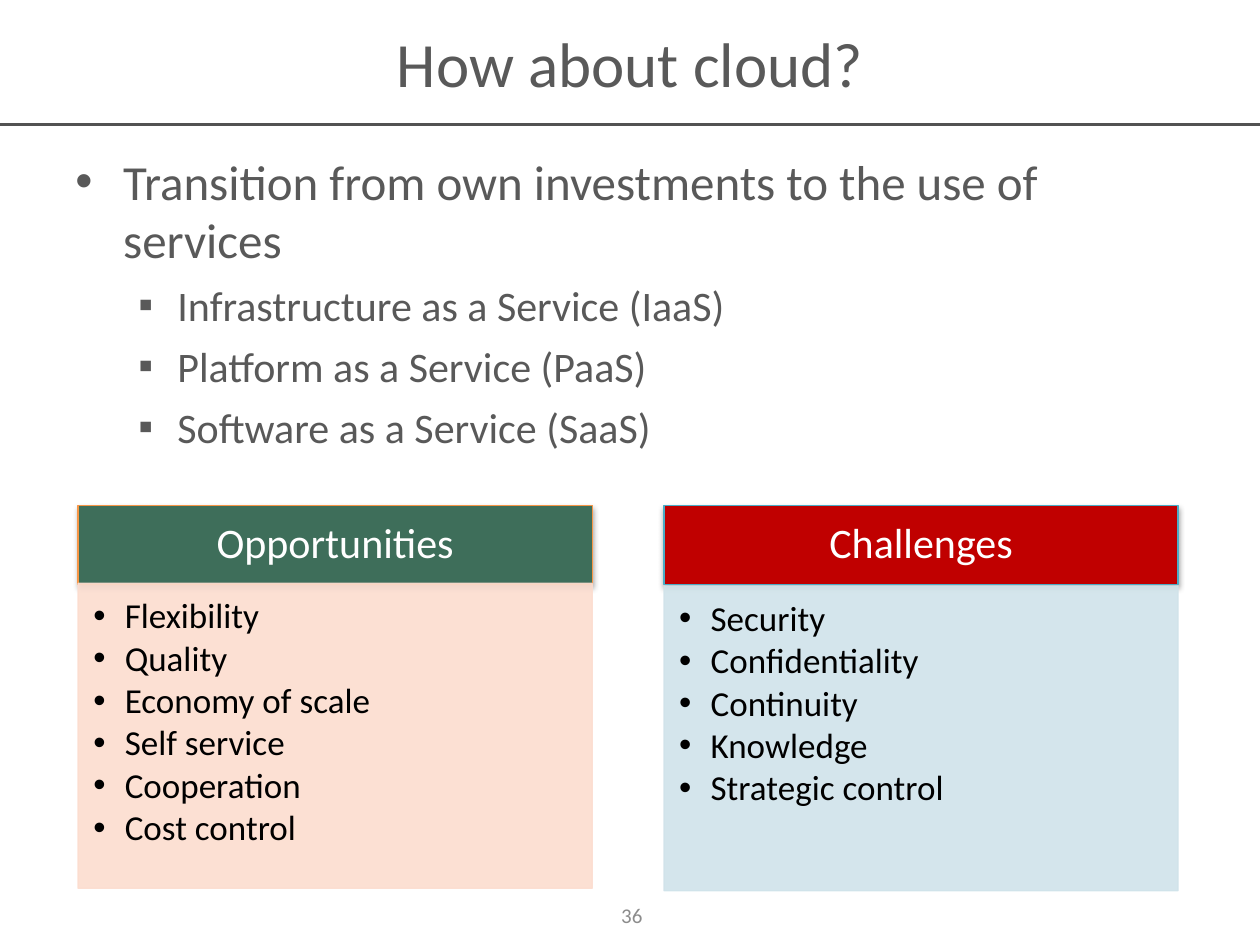
from lxml.etree import SubElement
from pptx import Presentation
from pptx.dml.color import RGBColor
from pptx.enum.shapes import MSO_CONNECTOR as Connector, MSO_SHAPE as Shape
from pptx.enum.text import MSO_ANCHOR as Anchor, PP_ALIGN as Align
from pptx.oxml.ns import qn
from pptx.util import Emu, Pt

PX = 9144  # 100 px to the inch
GREY = "595959"
HEADER_HEIGHT = 63

TITLE = dict(size=36, color=GREY, alignment=Align.CENTER)
TOPIC = dict(size=28, color=GREY, bullet="•", indent=(38, -38))
MODEL = dict(size=24, color=GREY, bullet="▪", indent=(81, -31), level=1, space_before=Pt(6))
HEADER = dict(size=24, color="FFFFFF", alignment=Align.CENTER, line_spacing=0.9)
POINT = dict(size=20, color="000000", bullet="•", indent=(25, -25), level=1,
             line_spacing=0.9, space_after=Pt(2.6), alignment=Align.LEFT)
NUMBER = dict(size=12, color="8C8C8C", alignment=Align.CENTER)


def px(length):
    return Emu(length * PX)


def rgb(code):
    return RGBColor.from_string(code)


def add_bullet(paragraph, symbol, indent):
    properties = paragraph._p.get_or_add_pPr()
    for key, length in zip(("marL", "indent"), indent):
        properties.set(key, str(px(length)))
    SubElement(properties, qn("a:buFont")).set("typeface", "Arial")
    SubElement(properties, qn("a:buChar")).set("char", symbol)


def write(shape, entries, anchor=Anchor.TOP, insets=(10, 5, 10, 5)):
    """Fill a shape with (text, format) paragraphs."""
    frame = shape.text_frame
    frame.word_wrap = True
    frame.vertical_anchor = anchor
    for side, inset in zip(("left", "top", "right", "bottom"), insets):
        setattr(frame, f"margin_{side}", px(inset))
    for index, (text, style) in enumerate(entries):
        paragraph = frame.paragraphs[0] if index == 0 else frame.add_paragraph()
        settings = dict(style)
        size, color = settings.pop("size"), settings.pop("color")
        symbol, indent = settings.pop("bullet", None), settings.pop("indent", None)
        for key, value in settings.items():
            setattr(paragraph, key, value)
        if symbol:
            add_bullet(paragraph, symbol, indent)
        run = paragraph.add_run()
        run.text = text
        run.font.name = "Calibri"
        run.font.size = Pt(size)
        run.font.color.rgb = rgb(color)


def add_text(slide, box, entries, anchor=Anchor.TOP):
    write(slide.shapes.add_textbox(*map(px, box)), entries, anchor)


def add_panel(slide, box, fill, line):
    panel = slide.shapes.add_shape(Shape.RECTANGLE, *map(px, box))
    panel.shadow.inherit = False
    panel.fill.solid()
    panel.fill.fore_color.rgb = rgb(fill)
    panel.line.color.rgb = rgb(line)
    panel.line.width = Pt(0.75)
    return panel


def add_drop_shadow(panel):
    effects = panel._element.spPr.find(qn("a:effectLst"))
    shadow = SubElement(effects, qn("a:outerShdw"), blurRad=str(Pt(3.1)),
                        dist=str(Pt(1.8)), dir="5400000", rotWithShape="0")
    black = SubElement(shadow, qn("a:srgbClr"), val="000000")
    SubElement(black, qn("a:alpha"), val="35000")


def make_translucent(panel):
    for color in panel._element.spPr.iter(qn("a:srgbClr")):
        SubElement(color, qn("a:alpha"), val="90000")


def add_heading(slide, box, title):
    left, top, width, height = box
    rule = slide.shapes.add_connector(
        Connector.STRAIGHT, *map(px, (left, top + height, left + width, top + height)))
    rule.line.color.rgb = rgb("525252")
    rule.line.width = Pt(1.5)
    SubElement(rule._element.spPr, qn("a:effectLst"))
    add_text(slide, box, [(title, TITLE)], Anchor.MIDDLE)


def add_service_models(slide, box, topic, models):
    add_text(slide, box, [(topic, TOPIC)] + [(model, MODEL) for model in models])


def add_card(slide, box, title, points, header_fill, header_line, body_fill):
    left, top, width, height = box
    header = add_panel(slide, (left, top, width, HEADER_HEIGHT), header_fill, header_line)
    add_drop_shadow(header)
    write(header, [(title, HEADER)], Anchor.MIDDLE, (19, 11, 19, 11))
    body_box = (left, top + height - 242, width, 242)
    body = add_panel(slide, body_box, body_fill, body_fill)
    make_translucent(body)
    write(body, [(point, POINT) for point in points], insets=(12, 12, 16, 17))


def main():
    deck = Presentation()
    deck.slide_width, deck.slide_height = px(1000), px(750)
    slide = deck.slides.add_slide(deck.slide_layouts[6])
    add_heading(slide, (0, 0, 1000, 99), "How about cloud?")
    add_service_models(
        slide, (50, 115, 900, 583),
        "Transition from own investments to the use of services",
        ["Infrastructure as a Service (IaaS)", "Platform as a Service (PaaS)",
         "Software as a Service (SaaS)"])
    add_card(slide, (527, 401, 408, 306), "Challenges",
             ["Security", "Confidentiality", "Continuity", "Knowledge", "Strategic control"],
             "C00000", "4BACC6", "D0E3EA")
    add_card(slide, (62, 401, 408, 304), "Opportunities",
             ["Flexibility", "Quality", "Economy of scale", "Self service", "Cooperation",
              "Cost control"],
             "3E6E5A", "F79646", "FCDDCF")
    add_text(slide, (385, 706, 233, 40), [("36", NUMBER)], Anchor.MIDDLE)
    deck.save("out.pptx")


if __name__ == "__main__":
    main()
